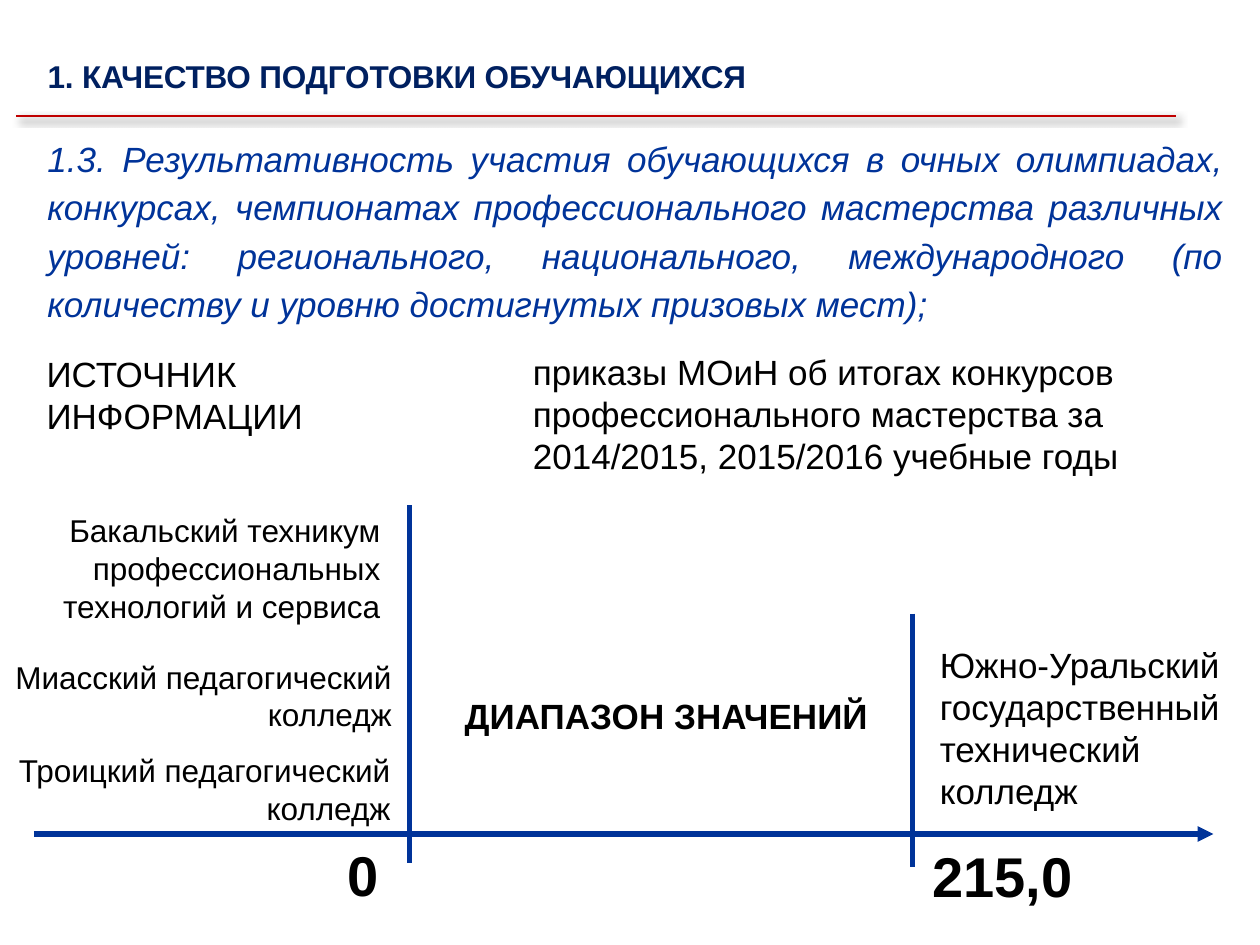
import pptx
import pptx.dml.color
import pptx.enum.shapes
import pptx.enum.text
import pptx.oxml
import pptx.oxml.ns
import pptx.util
from lxml import etree

Pt = pptx.util.Pt
Align = pptx.enum.text.PP_ALIGN
NAMESPACE = pptx.oxml.ns.nsdecls("a")
NAVY, BLUE, RED, BLACK = "002060", "003399", "C00000", "000000"


def write(box, text, size, color=BLACK, bold=False, italic=False,
          align=Align.LEFT, wrap=True):
    """Put one formatted paragraph into a box and return the paragraph."""
    frame = box.text_frame
    frame.text = text
    frame.word_wrap = wrap
    frame.auto_size = pptx.enum.text.MSO_AUTO_SIZE.NONE
    frame.vertical_anchor = pptx.enum.text.MSO_ANCHOR.TOP
    para = frame.paragraphs[0]
    para.alignment = align
    font = para.runs[0].font
    font.name, font.size = "Arial", Pt(size)
    font.bold, font.italic = bold, italic
    font.color.rgb = pptx.dml.color.RGBColor.from_string(color)
    return para


def draw_line(x1, y1, x2, y2, color, width):
    """Add a straight connector without the theme shadow."""
    line = page.shapes.add_connector(
        pptx.enum.shapes.MSO_CONNECTOR.STRAIGHT, Pt(x1), Pt(y1), Pt(x2), Pt(y2))
    line.line.color.rgb = pptx.dml.color.RGBColor.from_string(color)
    line.line.width = Pt(width)
    effects = pptx.oxml.parse_xml(f"<a:effectLst {NAMESPACE}/>")
    line._element.spPr.append(effects)
    return line, effects


deck = pptx.Presentation()
deck.slide_width, deck.slide_height = Pt(720), Pt(540)
page = deck.slides.add_slide(deck.slide_layouts[5])

# Heading with its shadowed rule
title = page.shapes.title
title.left, title.top, title.width, title.height = Pt(20), Pt(29), Pt(417), Pt(29)
heading = write(title, "1. КАЧЕСТВО ПОДГОТОВКИ ОБУЧАЮЩИХСЯ", 18, NAVY, bold=True, wrap=False)
heading.runs[0].font._element.set("spc", "-10")

rule, rule_effects = draw_line(9.4, 66.2, 671.8, 66.2, RED, 1.5)
rule_effects.append(pptx.oxml.parse_xml(
    f'<a:outerShdw {NAMESPACE} blurRad="{Pt(4)}" dist="{Pt(3)}" dir="2700000" '
    'algn="tl" rotWithShape="0"><a:srgbClr val="000000"><a:alpha val="40000"/>'
    "</a:srgbClr></a:outerShdw>"))

# Indicator
indicator = page.shapes.add_textbox(Pt(20), Pt(71.4), Pt(686), Pt(119.5))
para = write(
    indicator,
    "1.3. Результативность участия обучающихся в очных олимпиадах, конкурсах, "
    "чемпионатах профессионального мастерства различных уровней: регионального, "
    "национального, международного (по количеству и уровню достигнутых призовых мест);",
    20, BLUE, italic=True, align=Align.JUSTIFY)
para.line_spacing = 1.15

# Left, top, width, height, text, size, bold, alignment, wrap
labels = [
    (19.5, 198, 179, 55.5, "ИСТОЧНИК ИНФОРМАЦИИ", 20, False, Align.LEFT, True),
    (297.4, 196.6, 408, 80, "приказы МОиН об итогах конкурсов профессионального "
     "мастерства за 2014/2015, 2015/2016 учебные годы", 20, False, Align.LEFT, True),
    (-6.5, 288.7, 231, 72.7, "Бакальский техникум профессиональных технологий и сервиса",
     18, False, Align.RIGHT, True),
    (0, 372.2, 231, 51, "Миасский педагогический колледж", 18, False, Align.RIGHT, True),
    (-0.7, 425.5, 231, 51, "Троицкий педагогический колледж", 18, False, Align.RIGHT, True),
    (530, 364.3, 175.7, 104.4, "Южно-Уральский государственный технический колледж",
     20, False, Align.LEFT, True),
    (258.5, 393.1, 448, 31.5, "ДИАПАЗОН ЗНАЧЕНИЙ", 20, True, Align.LEFT, True),
    (191.5, 476.6, 32.4, 46, "0", 32, True, Align.LEFT, False),
    (525.6, 477.4, 95, 46, "215,0", 32, True, Align.LEFT, False),
]
for left, top, width, height, text, size, bold, align, wrap in labels:
    box = page.shapes.add_textbox(Pt(left), Pt(top), Pt(width), Pt(height))
    write(box, text, size, bold=bold, align=align, wrap=wrap)

# Range of values: two limits on an axis
for x, top, bottom in [(234, 288.7, 493.2), (521.3, 350.6, 495.4)]:
    draw_line(x, top, x, bottom, BLUE, 3)
axis, _ = draw_line(19.4, 476.6, 693.4, 476.6, BLUE, 3)
etree.SubElement(axis.line._get_or_add_ln(), pptx.oxml.ns.qn("a:tailEnd"), type="triangle")

deck.save("out.pptx")
